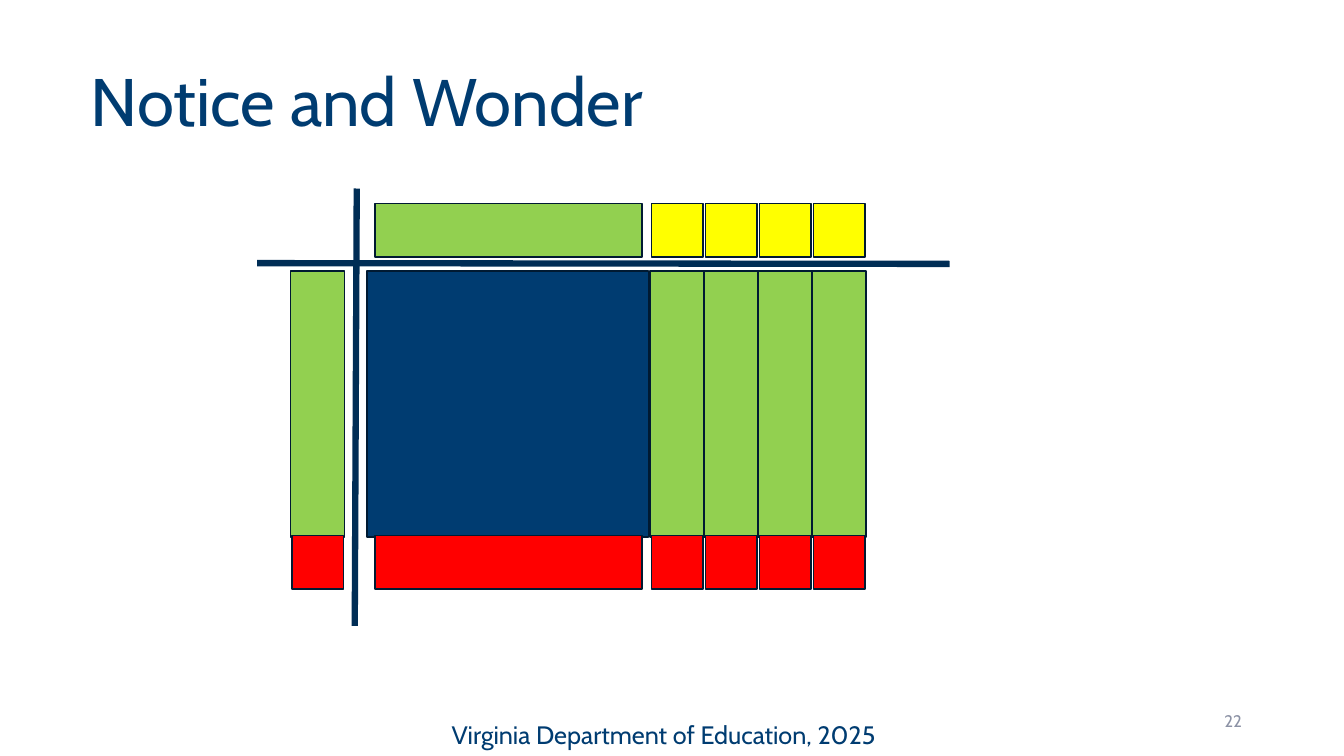
from lxml import etree
from pptx import Presentation
from pptx import util as u
from pptx.dml.color import RGBColor
from pptx.enum import shapes, text
from pptx.oxml import ns

COLORS = {
    "navy": "003C71", "axis": "002D55", "outline": "001A32", "gray": "8C92A5",
    "green": "92D050", "red": "FF0000", "yellow": "FFFF00",
}


class TileSlide:
    """Draws on one slide; all lengths are in centimetres."""

    font_name = "Cabin"

    def __init__(self, deck):
        self.slide = deck.slides.add_slide(deck.slide_layouts[5])

    def color(self, name):
        return RGBColor.from_string(COLORS[name])

    def style(self, paragraph, size, color, align):
        paragraph.font.name = self.font_name
        paragraph.font.size = u.Pt(size)
        paragraph.font.color.rgb = self.color(color)
        paragraph.alignment = align

    def title(self, words):
        heading = self.slide.shapes.title
        heading.left, heading.top = u.Cm(0), u.Cm(0)
        heading.width, heading.height = u.Cm(33.87), u.Cm(3.68)
        frame = heading.text_frame
        frame.text = words
        frame.auto_size = text.MSO_AUTO_SIZE.NONE
        frame.vertical_anchor = text.MSO_ANCHOR.BOTTOM
        frame.margin_left, frame.margin_right = u.Cm(2.29), u.Cm(0.25)
        frame.margin_top = frame.margin_bottom = u.Cm(0.13)
        frame.paragraphs[0].line_spacing = 0.9
        self.style(frame.paragraphs[0], 48, "navy", text.PP_ALIGN.LEFT)

    def label(self, words, left, top, width, size, color, align, anchor):
        box = self.slide.shapes.add_textbox(
            u.Cm(left), u.Cm(top), u.Cm(width), u.Cm(1.02))
        frame = box.text_frame
        frame.word_wrap = True
        frame.vertical_anchor = anchor
        frame.text = words
        self.style(frame.paragraphs[0], size, color, align)

    def tile(self, color, left, top, width, height):
        piece = self.slide.shapes.add_shape(
            shapes.MSO_SHAPE.RECTANGLE,
            u.Cm(left), u.Cm(top), u.Cm(width), u.Cm(height))
        piece.shadow.inherit = False
        piece.fill.solid()
        piece.fill.fore_color.rgb = self.color(color)
        piece.line.color.rgb = self.color("outline")
        piece.line.width = u.Pt(1)

    def axis(self, *ends):
        line = self.slide.shapes.add_connector(
            shapes.MSO_CONNECTOR.STRAIGHT, *map(u.Cm, ends))
        line.line.color.rgb = self.color("axis")
        line.line.width = u.Pt(4.5)
        etree.SubElement(line._element.spPr, ns.qn("a:effectLst"))


def main():
    deck = Presentation()
    deck.slide_width, deck.slide_height = u.Cm(33.87), u.Cm(19.05)
    page = TileSlide(deck)
    page.title("Notice and Wonder")
    page.label("22", 23.93, 17.65, 7.62, 12, "gray",
               text.PP_ALIGN.RIGHT, text.MSO_ANCHOR.MIDDLE)

    above, inside, below = 5.13, 6.83, 13.49
    tall_width, tall_height = 1.37, 6.7
    unit_width, unit_height = 1.3, 1.35
    columns = [16.38 + 1.36 * i for i in range(4)]

    page.tile("navy", 9.25, inside, 7.09, tall_height)
    for left in [7.32, *columns]:
        page.tile("green", left, inside, tall_width, tall_height)
        page.tile("red", left + 0.04, below, unit_width, unit_height)
    for left in columns:
        page.tile("yellow", left + 0.04, above, unit_width, unit_height)
    for color, top in (("green", above), ("red", below)):
        page.tile(color, 9.45, top, 6.73, unit_height)

    page.axis(6.48, 6.63, 23.93, 6.65)
    page.axis(8.99, 4.75, 8.94, 15.77)
    page.label("Virginia Department of Education, 2025", 11.13, 18.01, 11.61,
               18, "navy", text.PP_ALIGN.LEFT, text.MSO_ANCHOR.TOP)
    deck.save("out.pptx")


if __name__ == "__main__":
    main()
